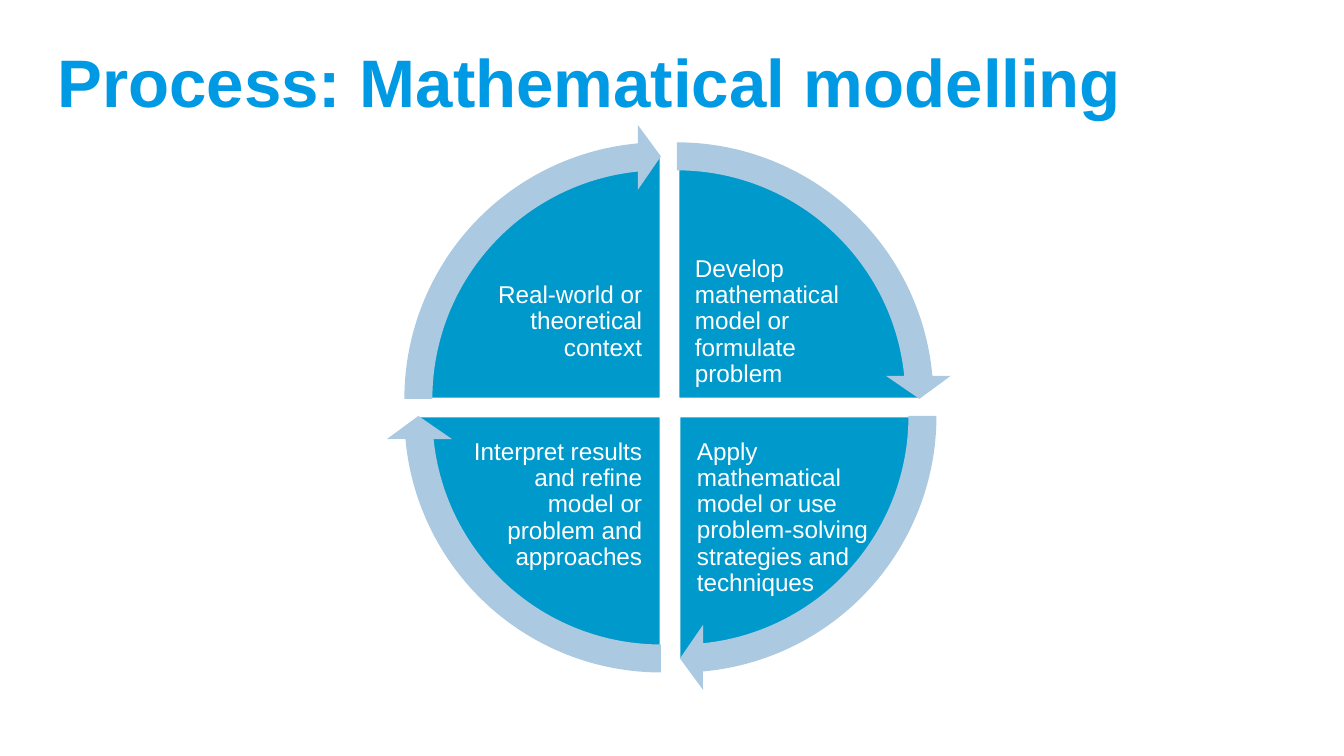
"""Build the mathematical modelling cycle slide."""
from pptx import Presentation
from pptx import util as u
from pptx.dml.color import RGBColor
from pptx.enum import shapes, text

PX = 914400 / 134.4
TITLE_BLUE = RGBColor(0x00, 0x99, 0xE3)
PIE_BLUE = RGBColor(0x00, 0x99, 0xCC)
ARROW_BLUE = RGBColor(0xAB, 0xCA, 0xE2)
WHITE = RGBColor(0xFF, 0xFF, 0xFF)

PIE_SIZE, ARROW_SIZE, TEXT_W, TEXT_H = 489, 550, 180, 134
QUARTER = 54
LEFT, RIGHT = text.PP_ALIGN.LEFT, text.PP_ALIGN.RIGHT

QUADRANTS = [
    {"start": 162, "pie": (433, 155), "arrow": (402, 124), "label": (692, 255),
     "align": LEFT, "words": "Develop mathematical model or formulate problem"},
    {"start": 0, "pie": (434, 171), "arrow": (405, 141), "label": (694, 451),
     "align": LEFT, "words": "Apply mathematical model or use problem-solving "
                             "strategies and techniques"},
    {"start": 54, "pie": (417, 171), "arrow": (386, 141), "label": (465, 438),
     "align": RIGHT, "words": "Interpret results and refine model or problem "
                              "and approaches"},
    {"start": 108, "pie": (417, 155), "arrow": (386, 124), "label": (465, 255),
     "align": RIGHT, "words": "Real-world or theoretical context"},
]


def px(n):
    """Turn pixels into EMU."""
    return u.Emu(round(n * PX))


def set_all(obj, **values):
    """Set every given attribute on an object."""
    for name, value in values.items():
        setattr(obj, name, value)


def write(sp, words, align, size, color, bold=False):
    """Put one formatted paragraph into a shape."""
    tf = sp.text_frame
    set_all(tf, word_wrap=True, auto_size=text.MSO_AUTO_SIZE.NONE,
            vertical_anchor=text.MSO_ANCHOR.MIDDLE)
    p = tf.paragraphs[0]
    set_all(p, alignment=align, line_spacing=0.9)
    r = p.add_run()
    r.text = words
    set_all(r.font, name="Arial", size=u.Pt(size), bold=bold)
    r.font.color.rgb = color


def add_title(s, words):
    """Place and format the title placeholder."""
    sp = s.shapes.title
    set_all(sp, left=px(44), top=px(46), width=px(1281), height=px(79))
    write(sp, words, LEFT, 36, TITLE_BLUE, bold=True)


def add_round(s, kind, corner, size, adjustments, fill):
    """Add a square-framed preset shape with its adjustments."""
    sp = s.shapes.add_shape(kind, *map(px, (*corner, size, size)))
    for i, value in enumerate(adjustments):
        sp.adjustments[i] = value
    sp.shadow.inherit = False
    sp.fill.solid()
    sp.fill.fore_color.rgb = fill
    return sp


def add_pie(s, corner, start):
    """Add one quarter of the circle with a white outline."""
    end = (start + QUARTER) % (4 * QUARTER)
    sp = add_round(s, shapes.MSO_SHAPE.PIE, corner, PIE_SIZE, (start, end), PIE_BLUE)
    sp.line.color.rgb = WHITE
    sp.line.width = u.Pt(2)


def add_arrow(s, corner, start):
    """Add the curved arrow that runs along one quarter."""
    tip = (start + QUARTER - 3.275) % (4 * QUARTER)
    sp = add_round(s, shapes.MSO_SHAPE.CIRCULAR_ARROW, corner, ARROW_SIZE,
                   (0.051, 3.275, tip, start, 0.059), ARROW_BLUE)
    sp.line.fill.background()


def add_label(s, corner, words, align):
    """Add the text of one quarter."""
    sp = s.shapes.add_textbox(*map(px, (*corner, TEXT_W, TEXT_H)))
    set_all(sp.text_frame, **{f"margin_{side}": px(3)
                              for side in ("left", "right", "top", "bottom")})
    write(sp, words, align, 13, WHITE)


def main():
    """Build and save the slide."""
    prs = Presentation()
    set_all(prs, slide_width=px(1344), slide_height=px(756))
    s = prs.slides.add_slide(prs.slide_layouts[5])
    add_title(s, "Process: Mathematical modelling")
    for q in QUADRANTS:
        add_pie(s, q["pie"], q["start"])
        add_label(s, q["label"], q["words"], q["align"])
    for q in QUADRANTS:
        add_arrow(s, q["arrow"], (q["start"]))
    prs.save("out.pptx")


if __name__ == "__main__":
    main()
